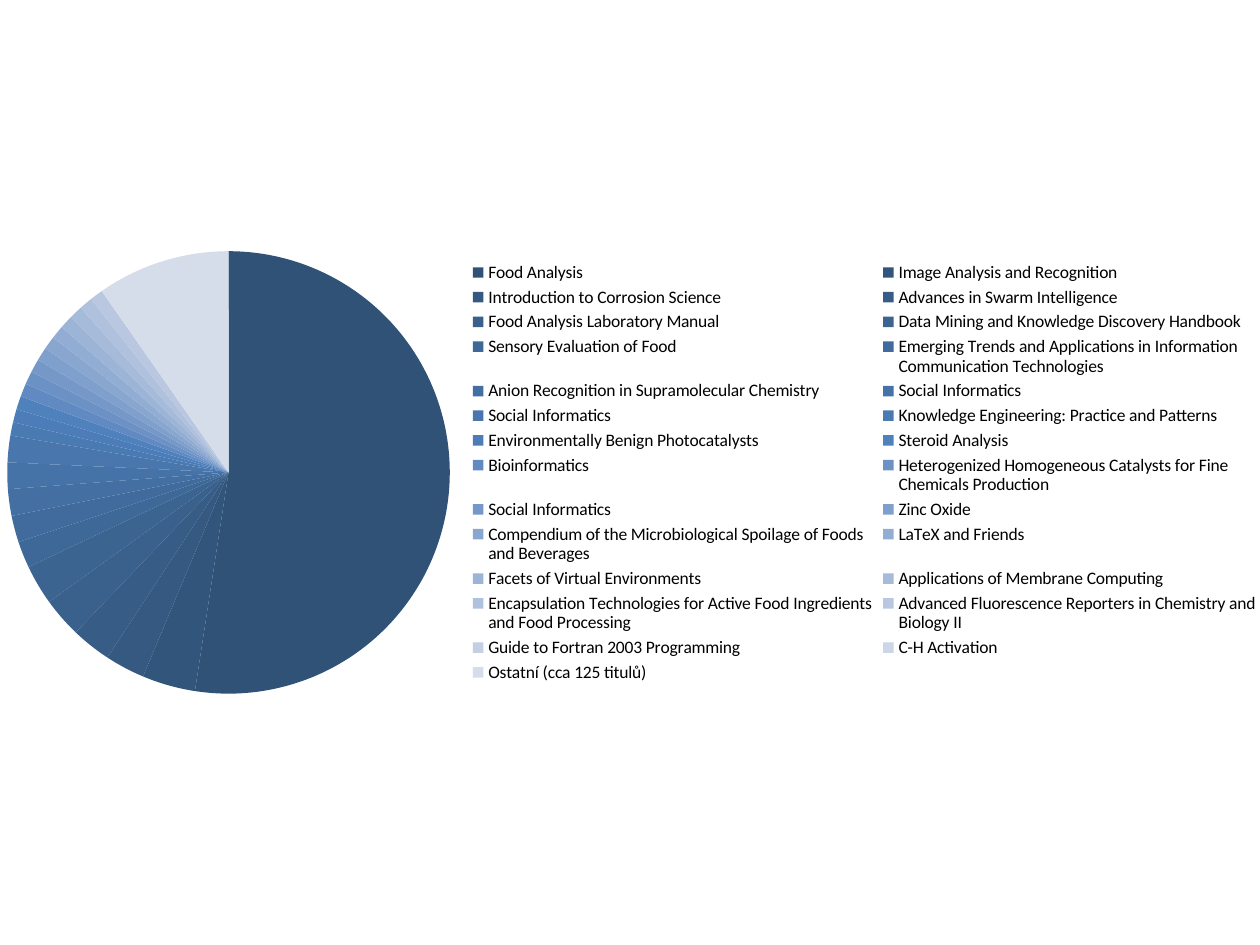
import pptx
import pptx.chart.data
import pptx.dml.color
import pptx.enum.chart
import pptx.util

TITLES = [
    ("Food Analysis", 54),
    ("Image Analysis and Recognition", 4),
    ("Introduction to Corrosion Science", 3),
    ("Advances in Swarm Intelligence", 3),
    ("Food Analysis Laboratory Manual", 3),
    ("Data Mining and Knowledge Discovery Handbook", 3),
    ("Sensory Evaluation of Food", 2),
    ("Emerging Trends and Applications in Information Communication Technologies", 2),
    ("Anion Recognition in Supramolecular Chemistry", 2),
    ("Social Informatics", 2),
    ("Social Informatics", 2),
    ("Knowledge Engineering: Practice and Patterns", 1),
    ("Environmentally Benign Photocatalysts", 1),
    ("Steroid Analysis", 1),
    ("Bioinformatics", 1),
    ("Heterogenized Homogeneous Catalysts for Fine Chemicals Production", 1),
    ("Social Informatics", 1),
    ("Zinc Oxide", 1),
    ("Compendium of the Microbiological Spoilage of Foods and Beverages", 1),
    ("LaTeX and Friends", 1),
    ("Facets of Virtual Environments", 1),
    ("Applications of Membrane Computing", 1),
    ("Encapsulation Technologies for Active Food Ingredients and Food Processing", 1),
    ("Advanced Fluorescence Reporters in Chemistry and Biology II", 1),
    ("Guide to Fortran 2003 Programming", 0),
    ("C-H Activation", 0),
    ("Ostatní (cca 125 titulů)", 10),
]
DARK_SHADES = ("305276", "4F81BD", 14)
LIGHT_SHADES = ("628AC2", "D6DDEA", 13)


def color(hex_value):
    return pptx.dml.color.RGBColor.from_string(hex_value)


def shades(first, last, count):
    start, end = color(first), color(last)
    return [
        "".join(f"{round(a + (b - a) * step / (count - 1)):02X}" for a, b in zip(start, end))
        for step in range(count)
    ]


def add_titles_pie(slide):
    data = pptx.chart.data.CategoryChartData()
    data.categories = [title for title, share in TITLES]
    data.add_series("Series 1", [share for title, share in TITLES])
    bounds = [pptx.util.Inches(length) for length in (-0.08, 0.47, 10.17, 6.56)]
    chart = slide.shapes.add_chart(pptx.enum.chart.XL_CHART_TYPE.PIE, *bounds, data).chart
    chart.has_title = False
    chart.font.name = "Calibri"
    chart.font.size = pptx.util.Pt(10)
    chart.font.color.rgb = color("000000")

    plot = chart.plots[0]
    plot.vary_by_categories = True
    for index, shade in enumerate(shades(*DARK_SHADES) + shades(*LIGHT_SHADES)):
        point = plot.series[0].points[index]
        point.format.fill.solid()
        point.format.fill.fore_color.rgb = color(shade)
        point.format.line.fill.background()

    chart.has_legend = True
    chart.legend.position = pptx.enum.chart.XL_LEGEND_POSITION.RIGHT
    chart.legend.include_in_layout = False


def main():
    presentation = pptx.Presentation()
    presentation.slide_width = pptx.util.Inches(10)
    presentation.slide_height = pptx.util.Inches(7.5)
    slide = presentation.slides.add_slide(presentation.slide_layouts[6])
    add_titles_pie(slide)
    presentation.save("out.pptx")


if __name__ == "__main__":
    main()
